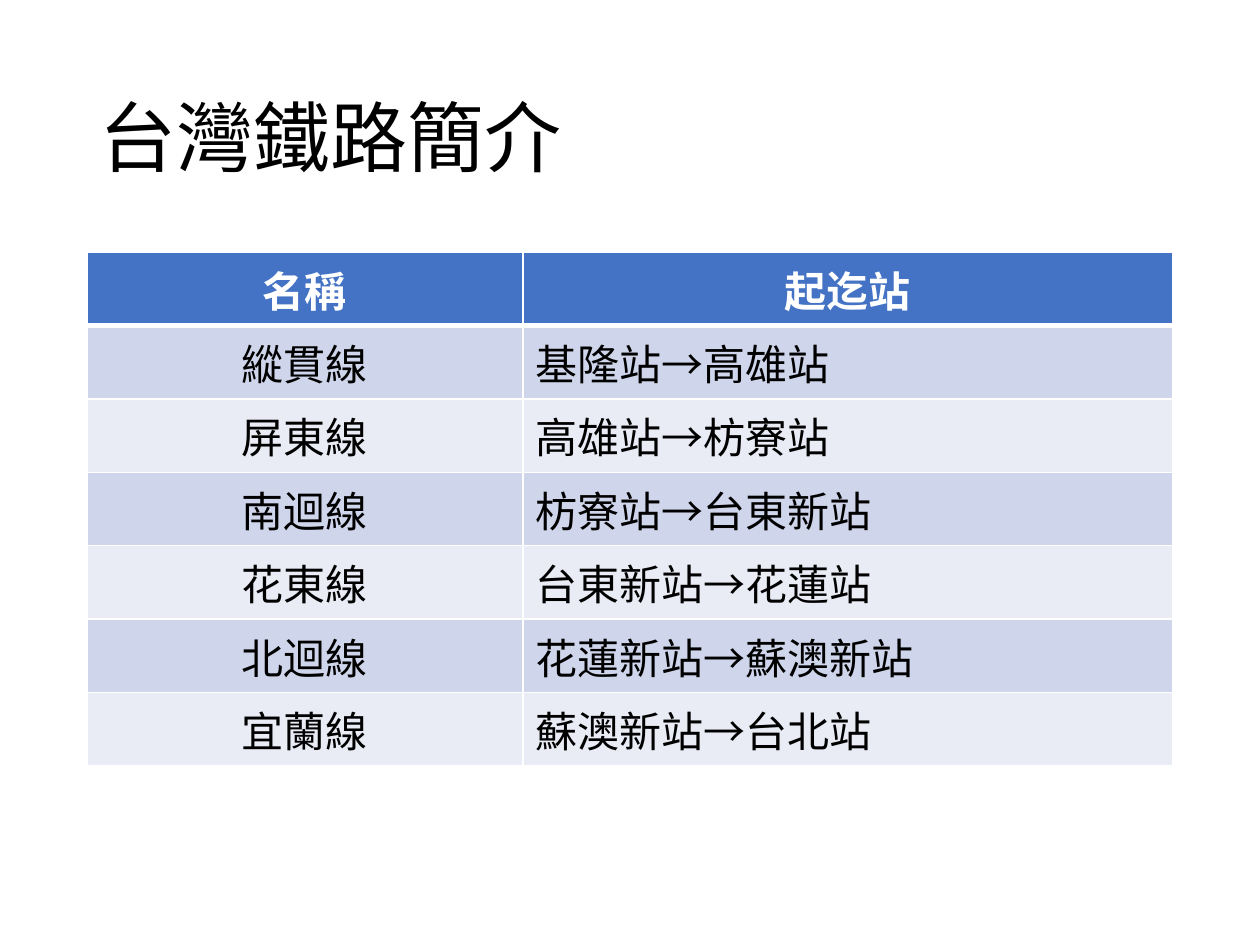
from dataclasses import dataclass

from lxml import etree
from pptx import Presentation
from pptx.dml.color import RGBColor
from pptx.enum.text import MSO_ANCHOR, PP_ALIGN
from pptx.oxml.ns import qn
from pptx.util import Inches, Pt

MIDDLE = MSO_ANCHOR.MIDDLE
LEFT, CENTER = PP_ALIGN.LEFT, PP_ALIGN.CENTER


@dataclass(frozen=True)
class Theme:
    font: str = "Calibri"
    title_size: int = 44
    table_size: int = 24
    ink: str = "000000"
    white: str = "FFFFFF"
    header: str = "4472C4"
    bands: tuple = ("CFD5EA", "E9EBF5")
    rule: int = 1
    header_rule: int = 3


THEME = Theme()
HEADINGS = ("名稱", "起迄站")
LINES = (
    ("縱貫線", "基隆站→高雄站"),
    ("屏東線", "高雄站→枋寮站"),
    ("南迴線", "枋寮站→台東新站"),
    ("花東線", "台東新站→花蓮站"),
    ("北迴線", "花蓮新站→蘇澳新站"),
    ("宜蘭線", "蘇澳新站→台北站"),
)
NAME_WIDTH = Inches(3.46)


def style_text(paragraph, size, color, bold=False):
    font = paragraph.font
    font.name = THEME.font
    font.size = Pt(size)
    font.bold = bold
    font.color.rgb = RGBColor.from_string(color)


def add_borders(cell, top, bottom):
    properties = cell._tc.get_or_add_tcPr()
    widths = {"a:lnL": THEME.rule, "a:lnR": THEME.rule, "a:lnT": top, "a:lnB": bottom}
    for side, width in widths.items():
        line = etree.SubElement(properties, qn(side), w=str(Pt(width)))
        fill = etree.SubElement(line, qn("a:solidFill"))
        etree.SubElement(fill, qn("a:srgbClr"), val=THEME.white)


def add_title(slide, left, top, width, height):
    frame = slide.shapes.add_textbox(left, top, width, height).text_frame
    frame.word_wrap = True
    frame.vertical_anchor = MIDDLE
    title = frame.paragraphs[0]
    title.text = "台灣鐵路簡介"
    title.line_spacing = 0.9
    style_text(title, THEME.title_size, THEME.ink)


def add_railway_table(slide, left, top, width, height):
    rows = (HEADINGS, *LINES)
    table = slide.shapes.add_table(len(rows), len(HEADINGS), left, top, width, height).table
    table.columns[0].width = NAME_WIDTH
    table.columns[1].width = width - NAME_WIDTH

    for r, row in enumerate(rows):
        is_header = r == 0
        fill = THEME.header if is_header else THEME.bands[(r - 1) % 2]
        color = THEME.white if is_header else THEME.ink
        top_rule = THEME.header_rule if r == 1 else THEME.rule
        bottom_rule = THEME.header_rule if is_header else THEME.rule
        for c, text in enumerate(row):
            cell = table.cell(r, c)
            add_borders(cell, top_rule, bottom_rule)
            cell.fill.solid()
            cell.fill.fore_color.rgb = RGBColor.from_string(fill)
            cell.text = text
            paragraph = cell.text_frame.paragraphs[0]
            paragraph.alignment = CENTER if is_header or c == 0 else LEFT
            style_text(paragraph, THEME.table_size, color, is_header)


def main():
    deck = Presentation()
    deck.slide_width, deck.slide_height = Inches(10), Inches(7.5)
    slide = deck.slides.add_slide(deck.slide_layouts[6])
    left, width = Inches(0.69), Inches(8.62)
    add_title(slide, left, Inches(0.4), width, Inches(1.45))
    add_railway_table(slide, left, Inches(2), width, Inches(4.08))
    deck.save("out.pptx")


if __name__ == "__main__":
    main()
